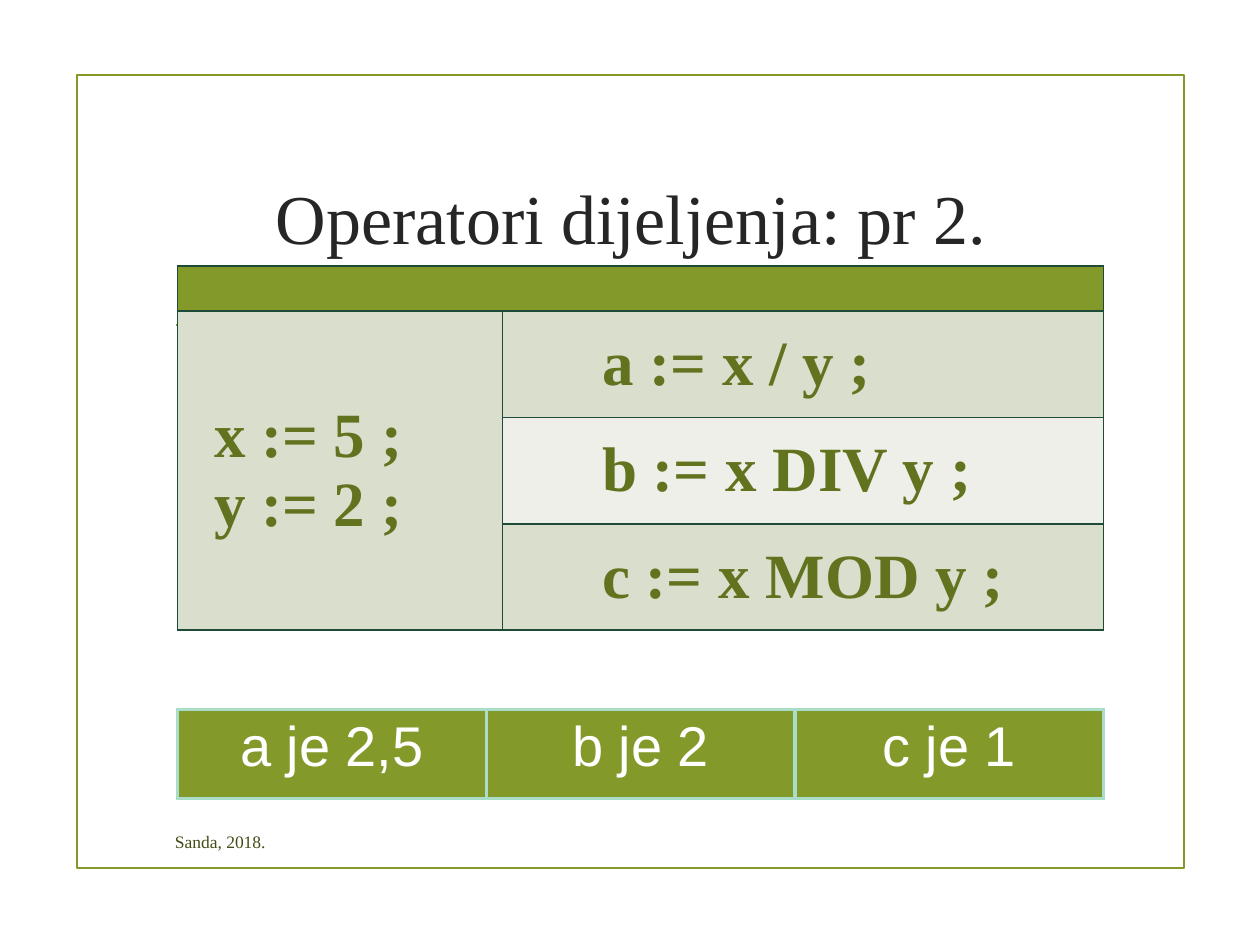
from dataclasses import dataclass

from lxml.etree import SubElement
from pptx import Presentation
from pptx.dml.color import RGBColor
from pptx.enum.shapes import MSO_CONNECTOR, MSO_SHAPE
from pptx.enum.text import MSO_ANCHOR as Anchor, PP_ALIGN as Align
from pptx.oxml.ns import qn
from pptx.util import Inches, Pt

WIDTH, HEIGHT = Inches(10), Inches(7.5)
COLORS = {
    "olive": "83992A", "title": "262626", "footer": "414D15", "code": "62731F",
    "band": "D9DECD", "light": "EDEFE8", "grid": "1E4B38", "mint": "A9DDC7",
    "white": "FFFFFF",
}


@dataclass(frozen=True)
class Frame:
    """A rectangle in percent of the slide's width and height."""
    left: float
    top: float
    width: float
    height: float

    def lengths(self) -> tuple[int, int, int, int]:
        return across(self.left), down(self.top), across(self.width), down(self.height)


@dataclass(frozen=True)
class Style:
    font: str
    size: float
    color: str
    bold: bool = False
    align: Align = Align.LEFT


@dataclass(frozen=True)
class Entry:
    """A filled table cell, with an optional span and left margin in inches."""
    row: int
    column: int
    fill: str
    lines: tuple[str, ...] = ()
    margin: float = 0
    level: int = 0
    rows: int = 1
    columns: int = 1


TITLE = Style("Times New Roman", 40, "title", align=Align.CENTER)
FOOTER = Style("Times New Roman", 10, "footer")
CODE = Style("Times New Roman", 36, "code", bold=True)
RESULT = Style("Arial", 32, "white", align=Align.CENTER)
HANGING = 0.49

CODE_CELLS = (
    Entry(0, 0, "olive", columns=2),
    Entry(1, 0, "band", ("x := 5 ;", "y := 2 ;"), 0.68, rows=3),
    Entry(1, 1, "band", ("a := x / y ;",), 1.18, 1),
    Entry(2, 1, "light", ("b := x DIV y ;",), 1.18, 1),
    Entry(3, 1, "band", ("c := x MOD y ;",), 1.18, 1),
)
RESULT_CELLS = tuple(
    Entry(0, column, "olive", (text,))
    for column, text in enumerate(("a je 2,5", "b je 2", "c je 1"))
)


def across(percent: float) -> int:
    return round(WIDTH * percent / 100)


def down(percent: float) -> int:
    return round(HEIGHT * percent / 100)


def rgb(name: str) -> RGBColor:
    return RGBColor.from_string(COLORS[name])


def write(para, text: str, style: Style) -> None:
    para.alignment = style.align
    span = para.add_run()
    span.text = text
    span.font.name = style.font
    span.font.size = Pt(style.size)
    span.font.bold = style.bold
    span.font.color.rgb = rgb(style.color)


def add_text(page, frame: Frame, text: str, style: Style) -> None:
    box = page.shapes.add_textbox(*frame.lengths())
    box.text_frame.word_wrap = True
    box.text_frame.vertical_anchor = Anchor.MIDDLE
    write(box.text_frame.paragraphs[0], text, style)


def add_border(cell, color: str, points: float) -> None:
    properties = cell._tc.get_or_add_tcPr()
    for index, side in enumerate(("lnL", "lnR", "lnT", "lnB")):
        line = SubElement(properties, qn(f"a:{side}"), w=str(Pt(points)))
        fill = SubElement(line, qn("a:solidFill"))
        SubElement(fill, qn("a:srgbClr"), val=COLORS[color])
        properties.remove(line)
        properties.insert(index, line)  # borders come before the fill


def fill_cell(table, entry: Entry, style: Style, anchor: Anchor) -> None:
    cell = table.cell(entry.row, entry.column)
    if entry.rows > 1 or entry.columns > 1:
        cell.merge(table.cell(entry.row + entry.rows - 1,
                              entry.column + entry.columns - 1))
    cell.vertical_anchor = anchor
    for row in range(entry.row, entry.row + entry.rows):
        for column in range(entry.column, entry.column + entry.columns):
            part = table.cell(row, column)
            part.fill.solid()
            part.fill.fore_color.rgb = rgb(entry.fill)
            if not entry.lines:
                part.margin_top = part.margin_bottom = 0
    for index, text in enumerate(entry.lines):
        frame = cell.text_frame
        para = frame.add_paragraph() if index else frame.paragraphs[0]
        para.level = entry.level
        if entry.margin:
            properties = para._p.get_or_add_pPr()
            properties.set("marL", str(Inches(entry.margin)))
            properties.set("indent", str(-Inches(HANGING)))
        write(para, text, style)


def add_grid(page, frame: Frame, widths: tuple[float, ...], heights: tuple[float, ...],
             entries: tuple[Entry, ...], style: Style, anchor: Anchor,
             border: tuple[str, float]) -> None:
    """Draw a table; widths and heights are percent of the slide."""
    table = page.shapes.add_table(len(heights), len(widths), *frame.lengths()).table
    table.horz_banding = False
    for column, width in zip(table.columns, widths):
        column.width = across(width)
    for row, height in zip(table.rows, heights):
        row.height = down(height)
    for entry in entries:
        fill_cell(table, entry, style, anchor)
    for cell in table.iter_cells():
        add_border(cell, *border)


def add_decoration(page) -> None:
    """Draw the page outline and the rule under the title."""
    outline = page.shapes.add_shape(MSO_SHAPE.RECTANGLE,
                                    *Frame(6.1, 7.9, 87.9, 84).lengths())
    outline.shadow.inherit = False
    outline.fill.background()
    rule = page.shapes.add_connector(MSO_CONNECTOR.STRAIGHT, across(14), down(34.4),
                                     across(86.1), down(34.4))
    SubElement(rule._element.spPr, qn("a:effectLst"))
    for shape in (outline, rule):
        shape.line.color.rgb = rgb("olive")
        shape.line.width = Pt(1.25)


def main() -> None:
    deck = Presentation()
    deck.slide_width, deck.slide_height = WIDTH, HEIGHT
    page = deck.slides.add_slide(deck.slide_layouts[6])
    add_decoration(page)
    add_text(page, Frame(12.9, 13.33, 74.4, 19.07), "Operatori dijeljenja: pr 2.", TITLE)
    add_text(page, Frame(12.9, 86.93, 55.8, 4.13), "Sanda, 2018.", FOOTER)
    add_grid(page, Frame(14.1, 28.13, 73.5, 38.55), (25.8, 47.7), (4.8,) + (11.25,) * 3,
             CODE_CELLS, CODE, Anchor.MIDDLE, ("grid", 1))
    add_grid(page, Frame(14.1, 75.07, 73.5, 9.4), (24.5,) * 3, (9.4,),
             RESULT_CELLS, RESULT, Anchor.TOP, ("mint", 2.25))
    deck.save("out.pptx")


if __name__ == "__main__":
    main()
